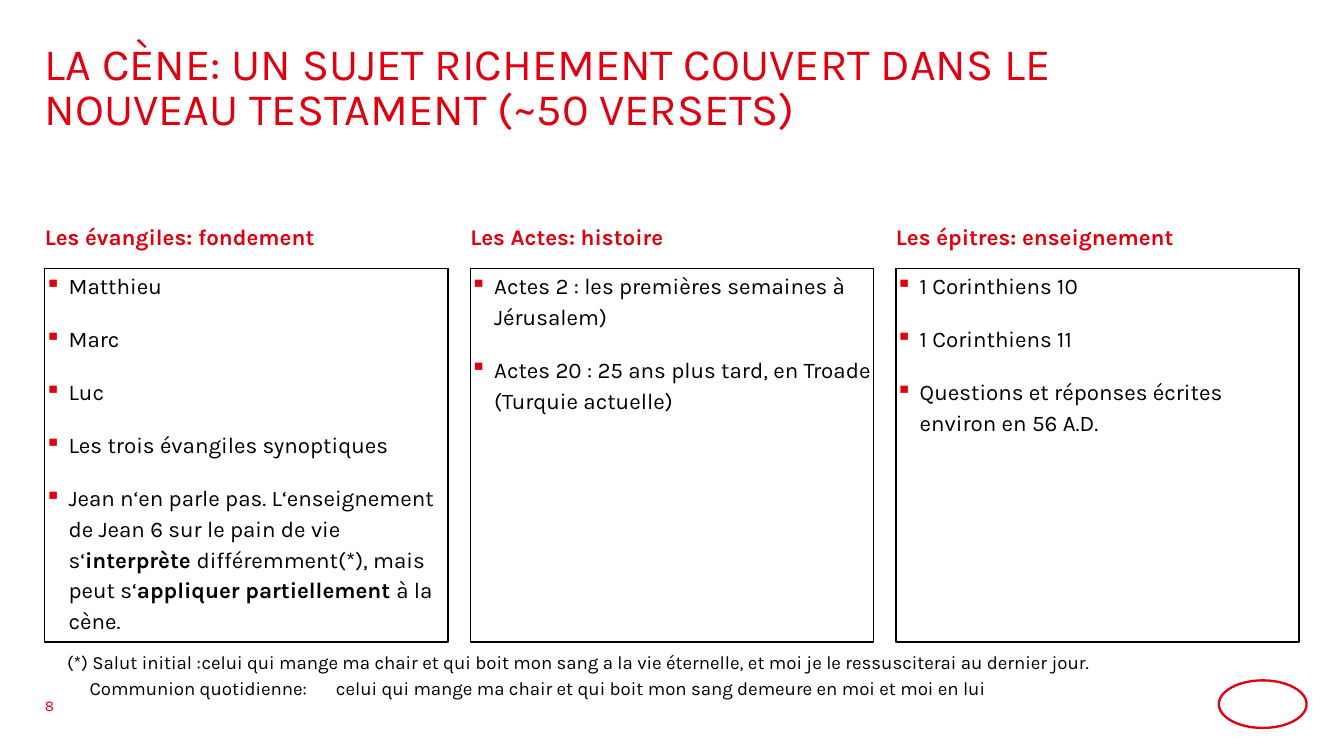
from lxml import etree
from pptx import Presentation
from pptx import util as u
from pptx.dml.color import RGBColor
from pptx.enum import shapes, text
from pptx.oxml.ns import qn

Pt = u.Pt
RED = RGBColor(0xE1, 0x00, 0x0F)
BLACK = RGBColor(0x00, 0x00, 0x00)
WHITE = RGBColor(0xFF, 0xFF, 0xFF)
FONT = "Karla"

LEFT, COLUMN_WIDTH, COLUMN_STEP = 24, 216, 228
HEADING_TOP, BOX_TOP, BOX_HEIGHT = 117.5, 144, 200
LINE_SPACING = 1.14
BULLET_INDENT = 12.75

HEADING = {"size": Pt(12), "bold": True, "color": RED}
BODY = {"size": Pt(12), "bold": False, "color": BLACK}
NOTE = {"size": Pt(10), "color": BLACK}
SPACED = {"line_spacing": LINE_SPACING, "space_after": Pt(12)}

# Each paragraph is a list of (text, bold) runs
COLUMNS = [
    ("Les évangiles: fondement", [
        [("Matthieu", False)],
        [("Marc", False)],
        [("Luc", False)],
        [("Les trois évangiles synoptiques", False)],
        [("Jean n‘en parle pas. L‘enseignement de Jean 6 sur le pain de vie s‘", False),
         ("interprète ", True),
         ("différemment(*), mais peut s‘", False),
         ("appliquer partiellement ", True),
         ("à la cène.", False)],
    ]),
    ("Les Actes: histoire", [
        [("Actes 2 : les premières semaines à Jérusalem)", False)],
        [("Actes 20 : 25 ans plus tard, en Troade (Turquie actuelle)", False)],
    ]),
    ("Les épitres: enseignement", [
        [("1 Corinthiens 10", False)],
        [("1 Corinthiens 11", False)],
        [("Questions et réponses écrites environ en 56 A.D.", False)],
    ]),
]

# First-line indent and text of each footnote line
FOOTNOTES = [
    (0, "(*) Salut initial :\tcelui qui mange ma chair et qui boit mon sang a la vie "
        "éternelle, et moi je le ressusciterai au dernier jour."),
    (12, "Communion quotidienne:\tcelui qui mange ma chair et qui boit mon sang "
         "demeure en moi et moi en lui"),
]


def set_values(target, values):
    for name, value in values.items():
        setattr(target, name, value)


def prepare_frame(shape, anchor=text.MSO_ANCHOR.TOP):
    frame = shape.text_frame
    set_values(frame, {"margin_left": 0, "margin_top": 0, "margin_right": 0,
                       "margin_bottom": 0, "word_wrap": True,
                       "vertical_anchor": anchor})
    return frame


def add_run(paragraph, content, style):
    run = paragraph.add_run()
    run.text = content
    values = dict(style)
    run.font.color.rgb = values.pop("color")
    set_values(run.font, {"name": FONT, **values})


def add_label(slide, box, content, style, spacing, anchor=text.MSO_ANCHOR.TOP):
    shape = slide.shapes.add_textbox(*map(Pt, box))
    paragraph = prepare_frame(shape, anchor).paragraphs[0]
    set_values(paragraph, spacing)
    add_run(paragraph, content, style)


def next_paragraph(frame, index):
    return frame.add_paragraph() if index else frame.paragraphs[0]


def add_bullet(paragraph):
    properties = paragraph._p.get_or_add_pPr()
    properties.set("marL", str(Pt(BULLET_INDENT)))
    properties.set("indent", str(-Pt(BULLET_INDENT)))
    color = etree.SubElement(properties, qn("a:buClr"))
    etree.SubElement(color, qn("a:srgbClr"), val=str(RED))
    etree.SubElement(properties, qn("a:buChar"), char="▪")


def add_bullet_box(slide, left, paragraphs):
    box = (left, BOX_TOP, COLUMN_WIDTH, BOX_HEIGHT)
    shape = slide.shapes.add_shape(shapes.MSO_SHAPE.RECTANGLE, *map(Pt, box))
    shape.shadow.inherit = False
    shape.fill.background()
    shape.line.color.rgb = BLACK
    shape.line.width = Pt(0.75)
    frame = prepare_frame(shape)
    for index, runs in enumerate(paragraphs):
        paragraph = next_paragraph(frame, index)
        add_bullet(paragraph)
        set_values(paragraph, {"alignment": text.PP_ALIGN.LEFT, **SPACED})
        for content, bold in runs:
            add_run(paragraph, content, {**BODY, "bold": bold})


def add_footnotes(slide):
    shape = slide.shapes.add_textbox(Pt(36), Pt(347), Pt(670), Pt(26))
    frame = prepare_frame(shape)
    for index, (indent, content) in enumerate(FOOTNOTES):
        paragraph = next_paragraph(frame, index)
        properties = paragraph._p.get_or_add_pPr()
        properties.set("marL", "0")
        properties.set("indent", str(Pt(indent)))
        tabs = etree.SubElement(properties, qn("a:tabLst"))
        etree.SubElement(tabs, qn("a:tab"), pos=str(Pt(162)), algn="l")
        paragraph.line_spacing = LINE_SPACING
        add_run(paragraph, content, NOTE)


def add_emblem(slide):
    shape = slide.shapes.add_shape(
        shapes.MSO_SHAPE.OVAL, Pt(653), Pt(364.5), Pt(47), Pt(25.5))
    shape.shadow.inherit = False
    shape.fill.solid()
    shape.fill.fore_color.rgb = WHITE
    shape.line.color.rgb = RED
    shape.line.width = Pt(1.25)


def main():
    presentation = Presentation()
    presentation.slide_width = Pt(720)
    presentation.slide_height = Pt(405)
    slide = presentation.slides.add_slide(presentation.slide_layouts[6])

    # Corner emblem, title and page number
    add_emblem(slide)
    add_label(slide, (LEFT, 24, 559, 48),
              "LA CÈNE: UN SUJET RICHEMENT COUVERT DANS LE NOUVEAU TESTAMENT (~50 VERSETS)",
              {"size": Pt(24), "color": RED}, {"line_spacing": Pt(24)})
    add_label(slide, (LEFT, 373, 25, 9.5), "8", {"size": Pt(8), "color": RED}, {},
              text.MSO_ANCHOR.MIDDLE)

    # Three columns: heading above a bordered list
    for index, (heading, paragraphs) in enumerate(COLUMNS):
        left = LEFT + index * COLUMN_STEP
        add_label(slide, (left, HEADING_TOP, COLUMN_WIDTH, 15), heading, HEADING, SPACED)
        add_bullet_box(slide, left, paragraphs)

    # Footnotes
    add_footnotes(slide)

    presentation.save("out.pptx")


if __name__ == "__main__":
    main()
